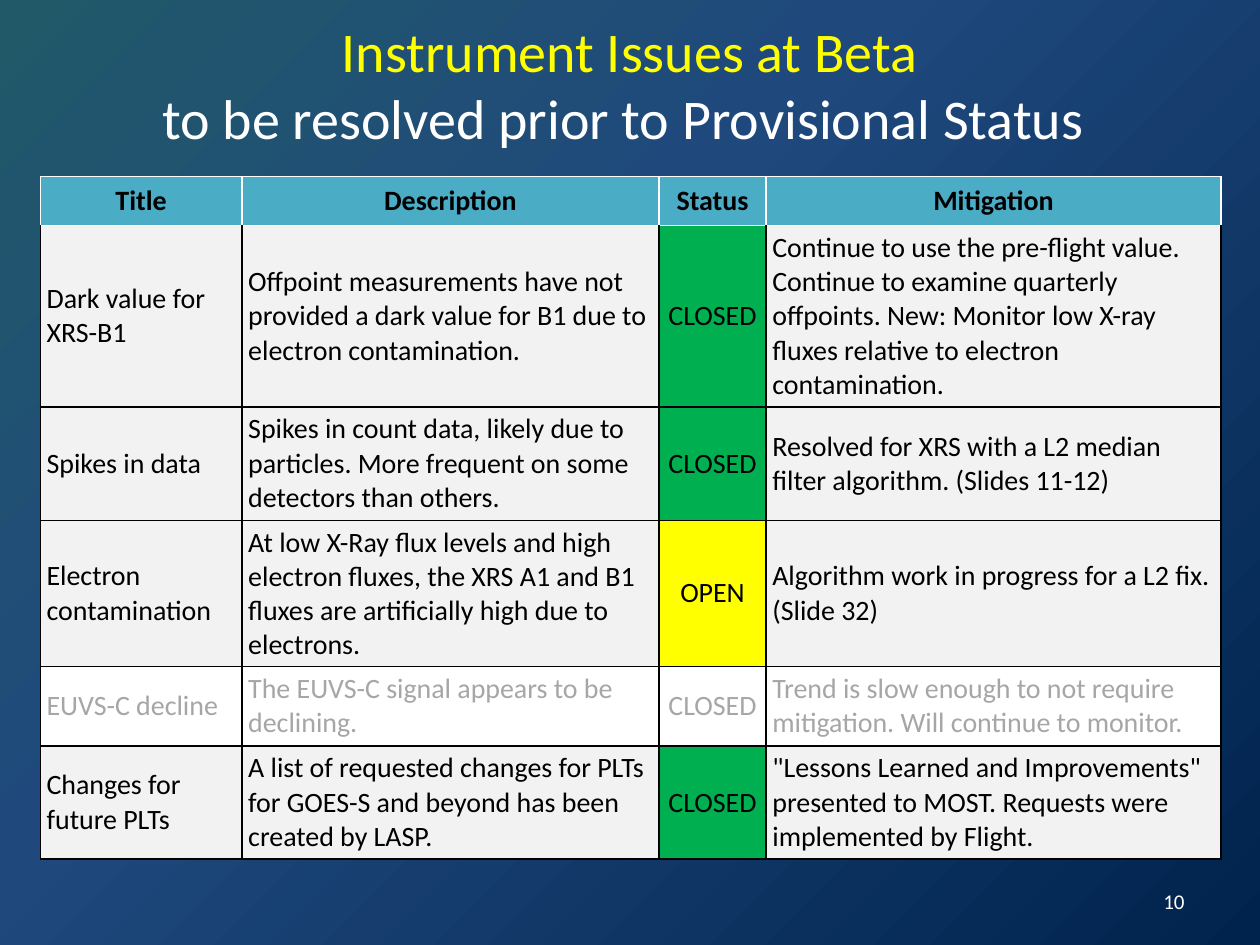
from pptx import Presentation
from pptx import util as u
from pptx.dml.color import RGBColor
from pptx.enum import text
from pptx.oxml import parse_xml
from pptx.oxml.ns import nsdecls, qn

FONT = "Calibri"
BLACK = RGBColor(0x00, 0x00, 0x00)
WHITE = RGBColor(0xFF, 0xFF, 0xFF)
YELLOW = RGBColor(0xFF, 0xFF, 0x00)
GREEN = RGBColor(0x00, 0xB0, 0x50)
AQUA = RGBColor(0x4B, 0xAC, 0xC6)
PALE = RGBColor(0xF2, 0xF2, 0xF2)
GREY = RGBColor(0xA6, 0xA6, 0xA6)
TEAL = RGBColor(0x21, 0x59, 0x68)
BLUE = RGBColor(0x1F, 0x49, 0x7D)
NAVY = RGBColor(0x00, 0x23, 0x4D)

GRID_COLUMNS, GRID_ROWS = 10, 7.5
UNIT = u.Inches(1)

TITLE_BOX = (0.5, 0.1, 9, 1.13)
TABLE_BOX = (0.32, 1.4, 9.37, 5.42)
NUMBER_BOX = (7.17, 6.95, 2.33, 0.4)

COLUMN_WIDTHS = (1.6, 3.31, 0.85, 3.61)
ROW_HEIGHTS = (0.39, 1.44, 0.9, 1.16, 0.63, 0.9)
STATUS_COLUMN = 2
STATUS_FILLS = {"CLOSED": GREEN, "OPEN": YELLOW}

HEADINGS = ("Title", "Description", "Status", "Mitigation")
ISSUES = (
    ("Dark value for XRS-B1",
     "Offpoint measurements have not provided a dark value for B1 due to electron contamination.",
     "CLOSED",
     "Continue to use the pre-flight value. Continue to examine quarterly offpoints. "
     "New: Monitor low X-ray fluxes relative to electron contamination."),
    ("Spikes in data",
     "Spikes in count data, likely due to particles. More frequent on some detectors than others.",
     "CLOSED",
     "Resolved for XRS with a L2 median filter algorithm. (Slides 11-12)"),
    ("Electron contamination",
     "At low X-Ray flux levels and high electron fluxes, the XRS A1 and B1 fluxes "
     "are artificially high due to electrons.",
     "OPEN",
     "Algorithm work in progress for a L2 fix. (Slide 32)"),
    ("EUVS-C decline",
     "The EUVS-C signal appears to be declining.",
     "CLOSED",
     "Trend is slow enough to not require mitigation. Will continue to monitor."),
    ("Changes for future PLTs",
     "A list of requested changes for PLTs for GOES-S and beyond has been created by LASP.",
     "CLOSED",
     '"Lessons Learned and Improvements" presented to MOST. Requests were implemented by Flight.'),
)
DIMMED_ISSUE = "EUVS-C decline"


def on_grid(box):
    return [int(UNIT * length) for length in box]


def style_paragraph(paragraph, size, color, alignment, bold=False):
    paragraph.alignment = alignment
    for run in paragraph.runs:
        run.font.name = FONT
        run.font.size = u.Pt(size)
        run.font.bold = bold
        run.font.color.rgb = color


def paint_background(slide):
    slide.background.fill.solid()
    solid = slide.element.find(".//" + qn("a:solidFill"))
    stops = "".join(
        f'<a:gs pos="{share * 1000}"><a:srgbClr val="{color}"/></a:gs>'
        for share, color in ((0, TEAL), (40, BLUE), (100, NAVY)))
    gradient = parse_xml(
        f'<a:gradFill {nsdecls("a")} rotWithShape="1"><a:gsLst>{stops}</a:gsLst>'
        '<a:path path="circle"><a:fillToRect r="100000" b="100000"/></a:path></a:gradFill>')
    solid.getparent().replace(solid, gradient)


def add_text(slide, box, lines, size, colors, alignment):
    shape = slide.shapes.add_textbox(*on_grid(box))
    frame = shape.text_frame
    frame.word_wrap = True
    frame.vertical_anchor = text.MSO_ANCHOR.MIDDLE
    frame.text = "\n".join(lines)
    for paragraph, color in zip(frame.paragraphs, colors):
        style_paragraph(paragraph, size, color, alignment)


def set_borders(cell, colors):
    properties = cell._tc.get_or_add_tcPr()
    for index, (side, color) in enumerate(zip("LRTB", colors)):
        properties.insert(index, parse_xml(
            f'<a:ln{side} {nsdecls("a")} w="{u.Pt(1)}"><a:solidFill>'
            f'<a:srgbClr val="{color}"/></a:solidFill></a:ln{side}>'))


def fill_cell(cell, content, fill, color, alignment, borders, bold=False):
    cell.text_frame.text = content
    cell.vertical_anchor = text.MSO_ANCHOR.MIDDLE
    cell.margin_left = cell.margin_right = u.Inches(0.05)
    cell.margin_top = cell.margin_bottom = u.Pt(3)
    cell.fill.solid()
    cell.fill.fore_color.rgb = fill
    style_paragraph(cell.text_frame.paragraphs[0], 16, color, alignment, bold)
    set_borders(cell, borders)


def add_issue_table(slide, box):
    table = slide.shapes.add_table(
        len(ROW_HEIGHTS), len(COLUMN_WIDTHS), *on_grid(box)).table
    for column, width in zip(table.columns, COLUMN_WIDTHS):
        column.width = int(UNIT * width)
    for row, height in zip(table.rows, ROW_HEIGHTS):
        row.height = int(UNIT * height)
    for cell, heading in zip(table.rows[0].cells, HEADINGS):
        fill_cell(cell, heading, AQUA, BLACK, text.PP_ALIGN.CENTER, [WHITE] * 4, True)
    for number, issue in enumerate(ISSUES, 1):
        dimmed = issue[0] == DIMMED_ISSUE
        color = GREY if dimmed else BLACK
        top = WHITE if number == 1 else BLACK
        for column, content in enumerate(issue):
            is_status = column == STATUS_COLUMN
            fill = WHITE if dimmed else STATUS_FILLS[content] if is_status else PALE
            alignment = text.PP_ALIGN.CENTER if is_status else text.PP_ALIGN.LEFT
            fill_cell(table.cell(number, column), content, fill, color, alignment,
                      (BLACK, BLACK, top, BLACK))


def main():
    presentation = Presentation()
    presentation.slide_width = int(UNIT * GRID_COLUMNS)
    presentation.slide_height = int(UNIT * GRID_ROWS)
    slide = presentation.slides.add_slide(presentation.slide_layouts[6])
    paint_background(slide)
    add_text(slide, NUMBER_BOX, ["10"], 12, [WHITE], text.PP_ALIGN.RIGHT)
    add_text(slide, TITLE_BOX,
             ["Instrument Issues at Beta", "to be resolved prior to Provisional Status "],
             32, [YELLOW, WHITE], text.PP_ALIGN.CENTER)
    add_issue_table(slide, TABLE_BOX)
    presentation.save("out.pptx")


if __name__ == "__main__":
    main()
